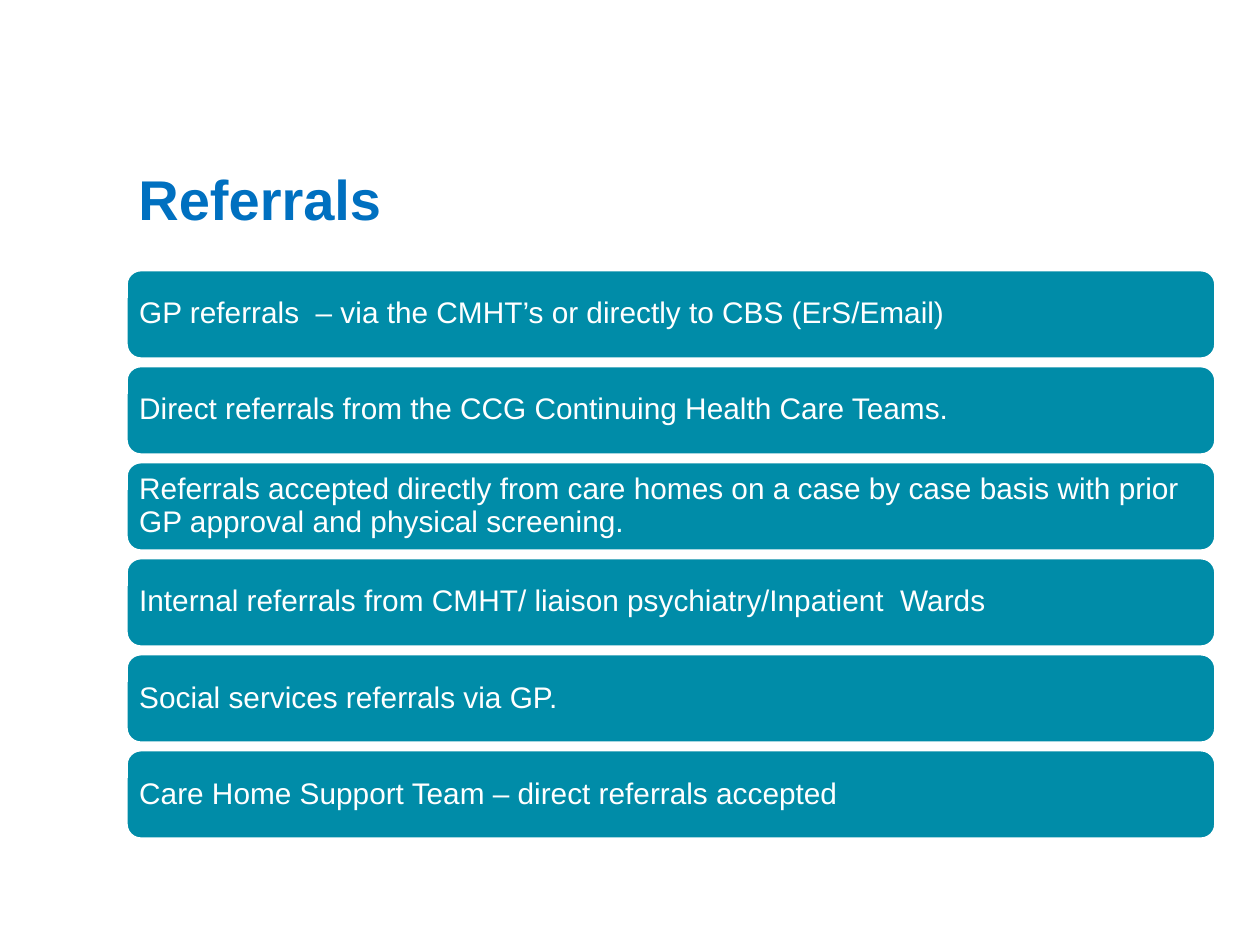
from pptx import Presentation
from pptx.dml.color import RGBColor
from pptx.enum.shapes import MSO_SHAPE
from pptx.enum.text import MSO_ANCHOR, PP_ALIGN
from pptx.util import Inches, Pt

REFERRALS = [
    "GP referrals  – via the CMHT’s or directly to CBS (ErS/Email)",
    "Direct referrals from the CCG Continuing Health Care Teams.",
    "Referrals accepted directly from care homes on a case by case basis "
    "with prior GP approval and physical screening.",
    "Internal referrals from CMHT/ liaison psychiatry/Inpatient  Wards",
    "Social services referrals via GP.",
    "Care Home Support Team – direct referrals accepted",
]
TITLE_FONT = {"name": "Arial", "size": Pt(32), "bold": True}
BAR_FONT = {"name": "Arial", "size": Pt(17), "bold": False}


def rgb(value):
    return RGBColor.from_string(value)


def set_attrs(obj, values):
    for name, value in values.items():
        setattr(obj, name, value)


def write_text(sp, text, font, color, margin, spacing):
    tf = sp.text_frame
    set_attrs(tf, {
        "word_wrap": True,
        "vertical_anchor": MSO_ANCHOR.MIDDLE,
        "margin_left": margin,
        "margin_right": margin,
        "margin_top": Inches(0.05),
        "margin_bottom": Inches(0.05),
    })
    p = tf.paragraphs[0]
    set_attrs(p, {"alignment": PP_ALIGN.LEFT, "line_spacing": spacing})
    r = p.add_run()
    r.text = text
    set_attrs(r.font, font)
    r.font.color.rgb = rgb(color)


def add_title(s, text, left, top, width, height):
    sp = s.shapes.add_textbox(left, top, width, height)
    write_text(sp, text, TITLE_FONT, "0070C0", Inches(0.1), 1.0)


def add_bars(s, items, left, top, width, height):
    bar_height = Inches(0.71)
    pitch = (height - bar_height) / (len(items) - 1)
    for i, text in enumerate(items):
        sp = s.shapes.add_shape(MSO_SHAPE.ROUNDED_RECTANGLE, left,
                                round(top + i * pitch), width, bar_height)
        sp.shadow.inherit = False
        sp.fill.solid()
        sp.fill.fore_color.rgb = rgb("008CA8")
        sp.line.color.rgb = rgb("FFFFFF")
        sp.line.width = Pt(2)
        write_text(sp, text, BAR_FONT, "FFFFFF", Inches(0.07), 0.9)


def main():
    prs = Presentation()
    set_attrs(prs, {"slide_width": Inches(10), "slide_height": Inches(7.5)})
    s = prs.slides.add_slide(prs.slide_layouts[6])
    left, width = Inches(1), Inches(8.65)
    add_title(s, "Referrals", left, Inches(1.15), width, Inches(0.84))
    add_bars(s, REFERRALS, left, Inches(2.14), width, Inches(4.52))
    prs.save("out.pptx")


if __name__ == "__main__":
    main()
